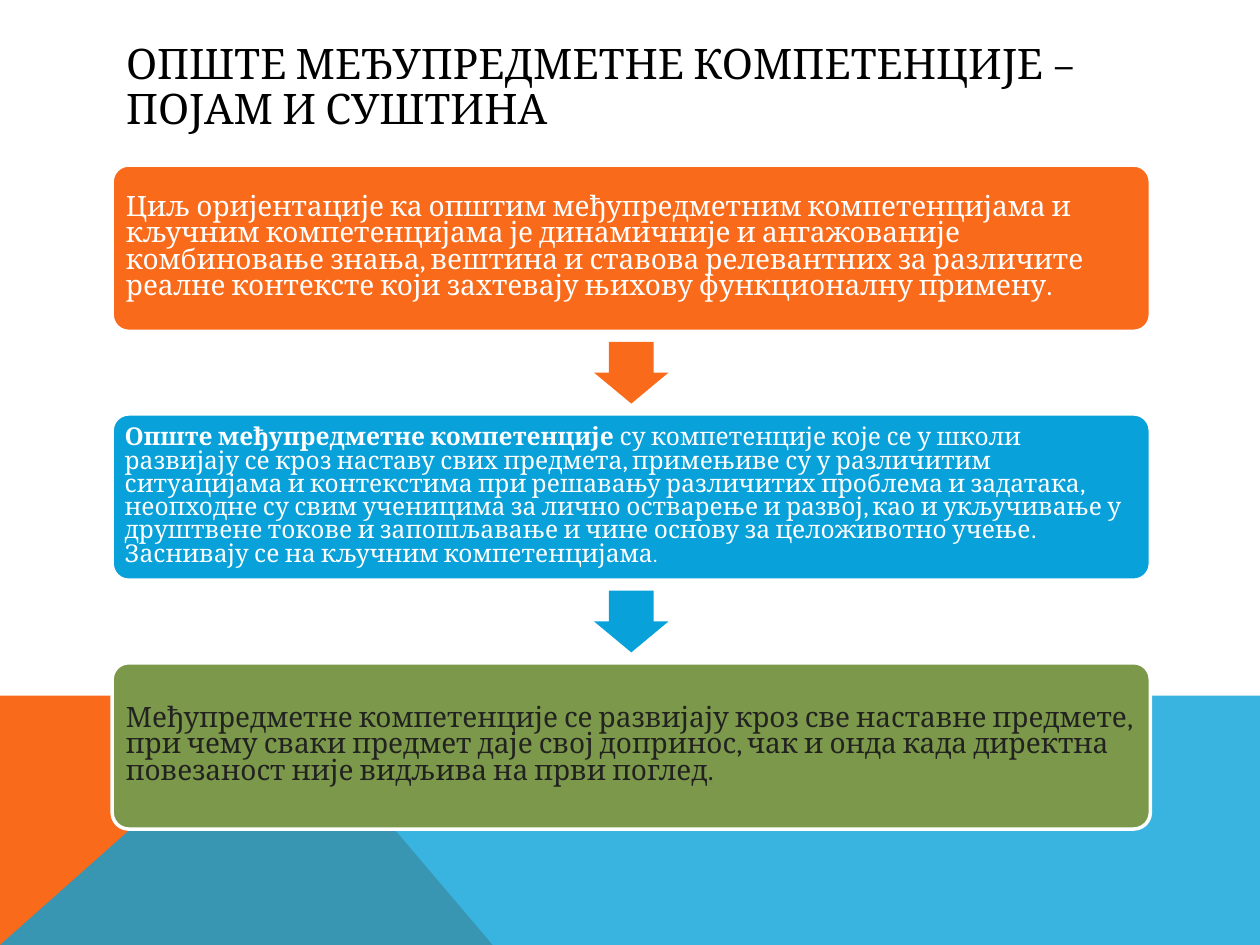
from pptx import Presentation
from pptx.dml.color import RGBColor
from pptx.enum.shapes import MSO_SHAPE
from pptx.enum.text import MSO_ANCHOR, PP_ALIGN
from pptx.util import Inches, Pt
from lxml.etree import SubElement
from pptx.oxml.ns import qn

ORANGE = RGBColor(0xF9, 0x6A, 0x1B)
BLUE = RGBColor(0x08, 0xA1, 0xD9)
GREEN = RGBColor(0x7C, 0x98, 0x4A)
WHITE = RGBColor(0xFF, 0xFF, 0xFF)
BLACK = RGBColor(0, 0, 0)
DARK = RGBColor(0x22, 0x22, 0x21)
FONT = "Cambria"

TITLE = "ОПШТЕ МЕЂУПРЕДМЕТНЕ КОМПЕТЕНЦИЈЕ – ПОЈАМ И СУШТИНА"
GOAL = (
    "Циљ оријентације ка општим међупредметним компетенцијама и кључним "
    "компетенцијама је динамичније и ангажованије комбиновање знања, вештина и "
    "ставова релевантних за различите реалне контексте који захтевају њихову "
    "функционалну примену."
)
TERM = "Опште међупредметне компетенције "
DEFINITION = (
    "су компетенције које се у школи развијају се кроз наставу свих предмета, "
    "примењиве су у различитим ситуацијама и контекстима при решавању различитих "
    "проблема и задатака, неопходне су свим ученицима за лично остварење и развој, "
    "као и укључивање у друштвене токове и запошљавање и чине основу за "
    "целоживотно учење. Заснивају се на кључним компетенцијама"
)
DEVELOPMENT = (
    "Међупредметне компетенције се развијају кроз све наставне предмете, при чему "
    "сваки предмет даје свој допринос, чак и онда када директна повезаност није "
    "видљива на први поглед."
)

STEPS = [
    (ORANGE, WHITE, 0.07, [(GOAL, 16, False)]),
    (BLUE, WHITE, 0.06, [(TERM, 14, True), (DEFINITION, 14, False), (".", 12, False)]),
    (GREEN, DARK, 0.07, [(DEVELOPMENT, 16, False)]),
]


def paint(shape, color):
    shape.shadow.inherit = False
    shape.fill.solid()
    shape.fill.fore_color.rgb = color
    shape.line.fill.background()


def format_span(span, size, color, bold=False):
    span.font.name = FONT
    span.font.size = Pt(size)
    span.font.bold = bold
    span.font.color.rgb = color


def add_polygon(page, points, color):
    corners = [(Inches(x), Inches(y)) for x, y in points]
    builder = page.shapes.build_freeform(*corners[0])
    builder.add_line_segments(corners[1:], close=True)
    shape = builder.convert_to_shape()
    paint(shape, color)
    return shape


def add_backdrop(page, left, top, width, height):
    right, bottom, peak = left + width, top + height, left + 2.23
    add_polygon(page, [(left, bottom), (left, top), (peak, top), (3.91, bottom)], ORANGE)
    band = add_polygon(
        page, [(left, bottom), (peak, top), (right, top), (right, bottom)], BLUE
    )
    color = band.fill._xPr.find(qn("a:solidFill"))[0]
    SubElement(color, qn("a:alpha"), val="80000")


def add_title(page, left, top, width, height):
    title = page.shapes.title
    title.left, title.top = Inches(left), Inches(top)
    title.width, title.height = Inches(width), Inches(height)
    frame = title.text_frame
    frame.text = TITLE
    frame.word_wrap = True
    frame.vertical_anchor = MSO_ANCHOR.MIDDLE
    para = frame.paragraphs[0]
    para.alignment = PP_ALIGN.LEFT
    para.line_spacing = 0.9
    format_span(para.runs[0], 24, BLACK)


def add_step(page, left, top, width, height, step):
    fill, text_color, inset, parts = step
    card = page.shapes.add_shape(
        MSO_SHAPE.ROUNDED_RECTANGLE,
        Inches(left), Inches(top), Inches(width), Inches(height),
    )
    card.adjustments[0] = 0.1
    paint(card, fill)
    card.line.color.rgb = WHITE
    card.line.width = Pt(2)

    margin = 0.04
    box = page.shapes.add_textbox(
        Inches(left + margin), Inches(top + margin),
        Inches(width - 2 * margin), Inches(height - 2 * margin),
    )
    frame = box.text_frame
    frame.word_wrap = True
    frame.vertical_anchor = MSO_ANCHOR.MIDDLE
    frame.margin_left = frame.margin_right = Inches(inset)
    frame.margin_top = frame.margin_bottom = Inches(inset)
    para = frame.paragraphs[0]
    para.line_spacing = 0.79
    for text, size, bold in parts:
        span = para.add_run()
        span.text = text
        format_span(span, size, text_color, bold)


def add_arrow(page, center_x, center_y, color):
    length, breadth = 0.49, 0.59
    arrow = page.shapes.add_shape(
        MSO_SHAPE.RIGHT_ARROW,
        Inches(center_x - length / 2), Inches(center_y - breadth / 2),
        Inches(length), Inches(breadth),
    )
    arrow.rotation = 90
    arrow.adjustments[0] = 0.6
    arrow.adjustments[1] = 0.5
    paint(arrow, color)


def add_process(page, left, top, width, height):
    card_height = 1.32
    pitch = (height - card_height) / (len(STEPS) - 1)
    for index, step in enumerate(STEPS):
        card_top = top + index * pitch
        add_step(page, left, card_top, width, card_height, step)
        if index < len(STEPS) - 1:
            gap_middle = card_top + (card_height + pitch) / 2
            add_arrow(page, left + width / 2, gap_middle, step[0])


def main():
    deck = Presentation()
    deck.slide_width, deck.slide_height = Inches(10), Inches(7.5)
    page = deck.slides.add_slide(deck.slide_layouts[5])
    add_backdrop(page, 0, 5.52, 10, 1.98)
    add_title(page, 0.9, 0.4, 8.22, 0.6)
    add_process(page, 0.89, 1.31, 8.24, 5.27)
    deck.save("out.pptx")


if __name__ == "__main__":
    main()
